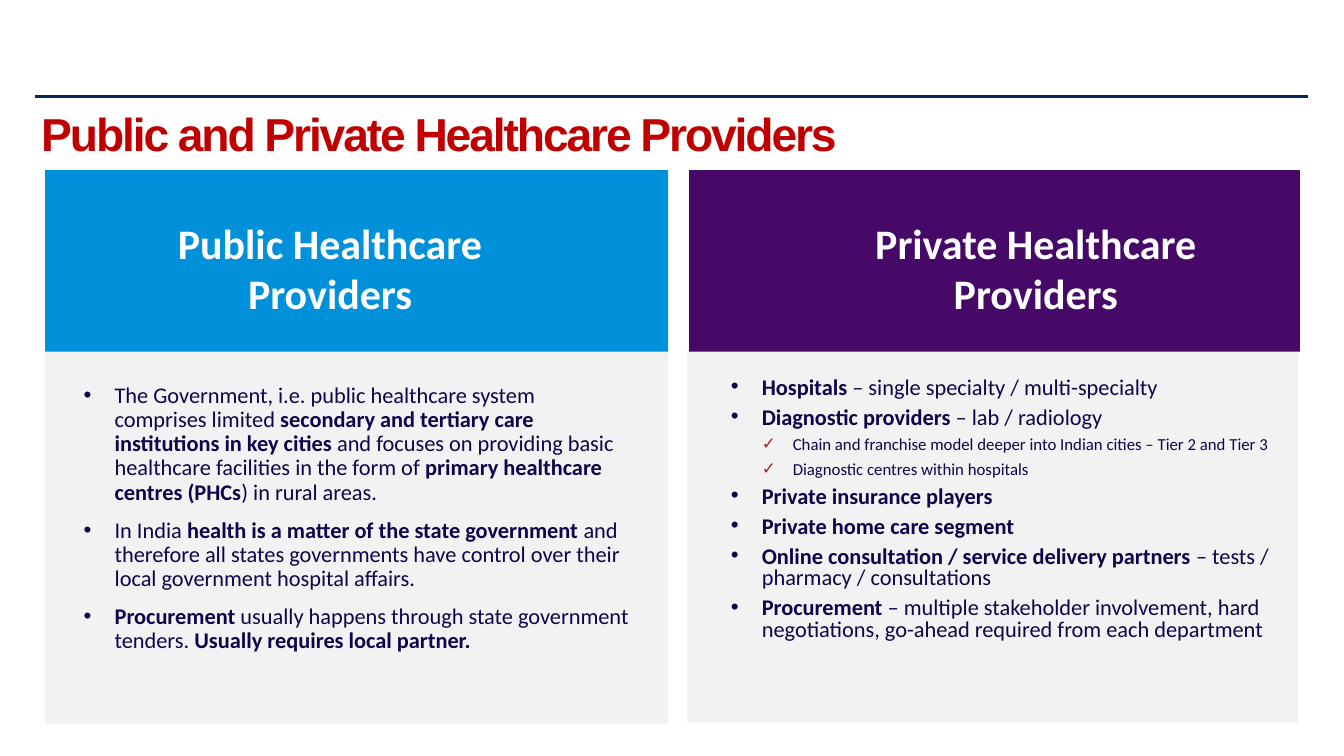
"""Build a slide that compares public and private healthcare providers."""
from dataclasses import dataclass

from lxml import etree
from pptx import Presentation
from pptx.dml.color import RGBColor
from pptx.enum.shapes import MSO_CONNECTOR, MSO_SHAPE
from pptx.enum.text import MSO_ANCHOR, PP_ALIGN
from pptx.oxml.ns import qn
from pptx.slide import Slide
from pptx.text.text import TextFrame, _Paragraph
from pptx.util import Cm, Pt

STRAIGHT = MSO_CONNECTOR.STRAIGHT
RECT = MSO_SHAPE.RECTANGLE
TOP = MSO_ANCHOR.TOP
LEFT, CENTER = PP_ALIGN.LEFT, PP_ALIGN.CENTER


@dataclass(frozen=True)
class Theme:
    rule: str = "08255A"
    title: str = "C00000"
    panel: str = "F2F2F2"
    public: str = "0091DA"
    private: str = "460968"
    head: str = "FFFFFF"
    ink: str = "12044B"
    check: str = "B11F26"
    title_font: str = "Arial"
    font: str = "Calibri"
    title_size: float = 33
    head_size: float = 30
    body_size: float = 16
    sub_size: float = 12


@dataclass(frozen=True)
class Box:
    left: float
    top: float
    width: float
    height: float

    def place(self) -> tuple[Cm, Cm, Cm, Cm]:
        return Cm(self.left), Cm(self.top), Cm(self.width), Cm(self.height)


@dataclass(frozen=True)
class Style:
    font: str
    size: float
    color: str
    bold: bool = False


@dataclass(frozen=True)
class Item:
    text: str
    level: int = 0


@dataclass(frozen=True)
class Column:
    head: str
    color: str
    band: Box
    panel: Box
    label: Box
    body: Box
    spacing: float
    before: float
    after: float
    items: tuple[Item, ...]


THEME = Theme()
INDENT = 0.78

COLUMNS = (
    Column(
        "Public Healthcare Providers", THEME.public,
        Box(1.14, 4.29, 15.7, 4.57), Box(1.14, 8.84, 15.7, 9.4),
        Box(3.2, 5.33, 10.24, 2.46), Box(2.11, 9.68, 13.77, 7.04),
        0.9, 10, 0,
        (
            Item("The Government, i.e. public healthcare system comprises limited "
                 "*secondary and tertiary care institutions in key cities *"
                 "and focuses on providing basic healthcare facilities in the form of "
                 "*primary healthcare centres (PHCs*) in rural areas."),
            Item("In India *health is a matter of the state government *"
                 "and therefore all states governments have control over their "
                 "local government hospital affairs."),
            Item("*Procurement *usually happens through state government tenders. "
                 "*Usually requires local partner.*"),
        ),
    ),
    Column(
        "Private Healthcare Providers", THEME.private,
        Box(17.37, 4.29, 15.39, 4.57), Box(17.32, 8.81, 15.39, 9.4),
        Box(21.29, 5.33, 9.63, 2.46), Box(18.42, 9.53, 13.92, 7.85),
        0.8, 0, 6,
        (
            Item("*Hospitals* – single specialty / multi-specialty"),
            Item("*Diagnostic providers *– lab / radiology"),
            Item("Chain and franchise model deeper into Indian cities – Tier 2 and Tier 3", 1),
            Item("Diagnostic centres within hospitals", 1),
            Item("*Private insurance players*"),
            Item("*Private home care segment*"),
            Item("*Online consultation / service delivery partners *"
                 "– tests / pharmacy / consultations"),
            Item("*Procurement *– multiple stakeholder involvement, hard negotiations, "
                 "go-ahead required from each department"),
        ),
    ),
)


def add_rule(slide: Slide, left: float, right: float, top: float) -> None:
    line = slide.shapes.add_connector(STRAIGHT, Cm(left), Cm(top), Cm(right), Cm(top))
    line.line.color.rgb = RGBColor.from_string(THEME.rule)
    line.line.width = Pt(2)
    etree.SubElement(line._element.spPr, qn("a:effectLst"))


def add_block(slide: Slide, box: Box, color: str) -> None:
    block = slide.shapes.add_shape(RECT, *box.place())
    block.shadow.inherit = False
    block.fill.solid()
    block.fill.fore_color.rgb = RGBColor.from_string(color)
    block.line.fill.background()


def add_frame(slide: Slide, box: Box, side: float, edge: float) -> TextFrame:
    frame = slide.shapes.add_textbox(*box.place()).text_frame
    frame.word_wrap = True
    frame.vertical_anchor = TOP
    frame.margin_left = frame.margin_right = Cm(side)
    frame.margin_top = frame.margin_bottom = Cm(edge)
    return frame


def write(para: _Paragraph, text: str, style: Style) -> None:
    for index, part in enumerate(text.split("*")):
        if part:
            run = para.add_run()
            run.text = part
            run.font.name = style.font
            run.font.size = Pt(style.size)
            run.font.bold = style.bold or index % 2 == 1
            run.font.color.rgb = RGBColor.from_string(style.color)


def add_bullet(para: _Paragraph, level: int) -> None:
    props = para._p.get_or_add_pPr()
    props.set("marL", str(Cm(INDENT * (level + 1))))
    props.set("indent", str(-Cm(INDENT)))
    color = etree.SubElement(props, qn("a:buClr"))
    value = THEME.check if level else THEME.ink
    etree.SubElement(color, qn("a:srgbClr"), val=value)
    etree.SubElement(props, qn("a:buFont"), typeface=THEME.title_font)
    etree.SubElement(props, qn("a:buChar"), char="✓" if level else "•")


def add_title(slide: Slide, text: str, box: Box) -> None:
    para = add_frame(slide, box, 0.25, 0.13).paragraphs[0]
    para.line_spacing = 0.9
    write(para, text, Style(THEME.title_font, THEME.title_size, THEME.title, True))
    para.runs[0]._r.get_or_add_rPr().set("spc", "-150")


def add_head(slide: Slide, text: str, box: Box) -> None:
    para = add_frame(slide, box, 0.15, 0.15).paragraphs[0]
    para.alignment = CENTER
    para.space_after = Pt(6)
    write(para, text, Style(THEME.font, THEME.head_size, THEME.head, True))


def add_body(slide: Slide, column: Column) -> None:
    frame = add_frame(slide, column.body, 0, 0)
    for index, item in enumerate(column.items):
        para = frame.add_paragraph() if index else frame.paragraphs[0]
        para.level = item.level
        add_bullet(para, item.level)
        para.alignment = LEFT
        para.line_spacing = column.spacing
        para.space_before = Pt(column.before if index else 0)
        para.space_after = Pt(column.after)
        size = THEME.sub_size if item.level else THEME.body_size
        write(para, item.text, Style(THEME.font, size, THEME.ink))


def main() -> None:
    deck = Presentation()
    deck.slide_width, deck.slide_height = Cm(33.87), Cm(19.05)
    slide = deck.slides.add_slide(deck.slide_layouts[6])
    add_rule(slide, 0.89, 32.97, 2.44)
    for column in COLUMNS:
        add_block(slide, column.panel, THEME.panel)
        add_block(slide, column.band, column.color)
        add_head(slide, column.head, column.label)
        add_body(slide, column)
    add_title(slide, "Public and Private Healthcare Providers", Box(0.79, 2.67, 32.11, 1.73))
    deck.save("out.pptx")


if __name__ == "__main__":
    main()
